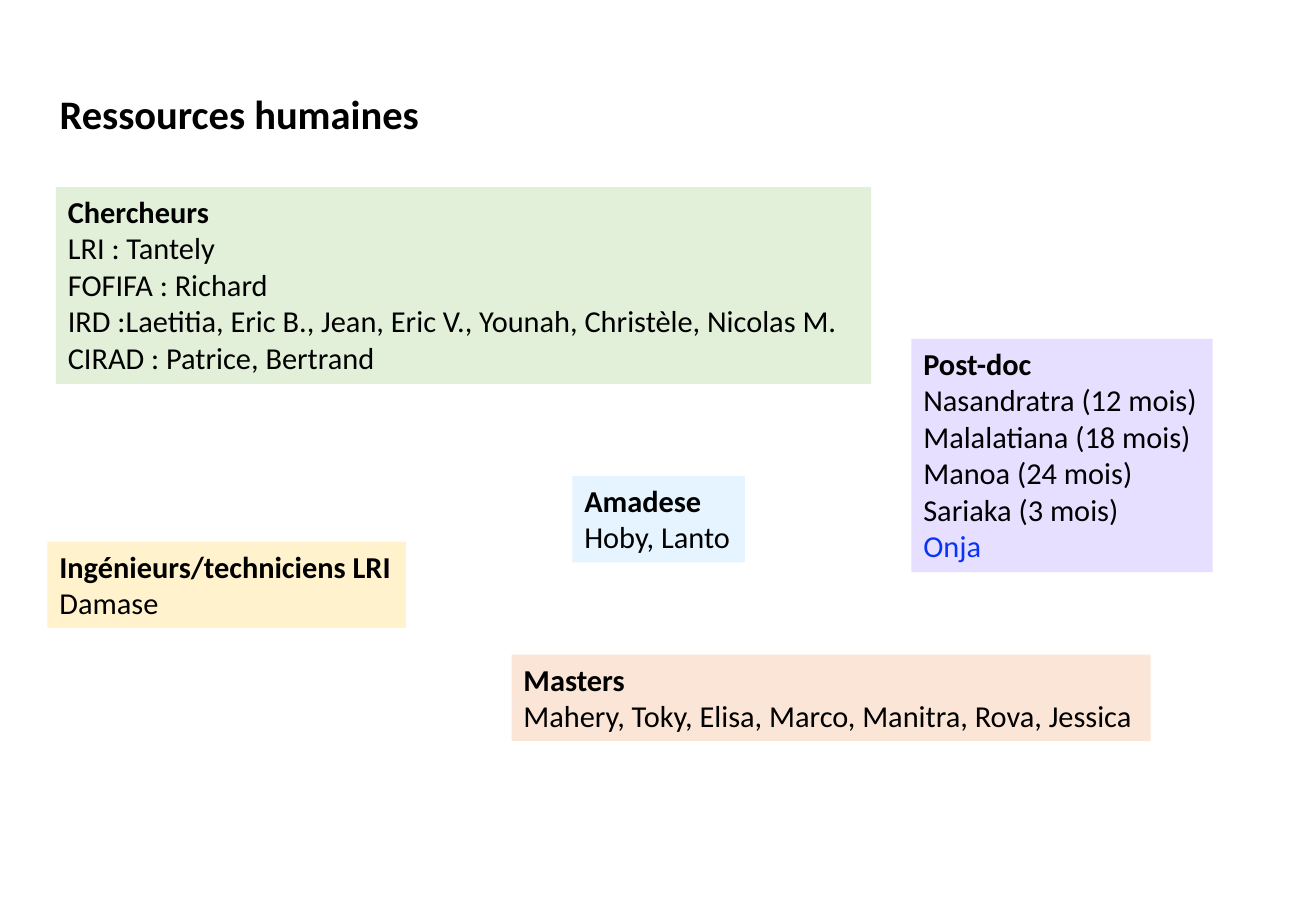
import pptx
import pptx.util
import pptx.dml.color
import pptx.enum.shapes
import pptx.enum.text

Inches = pptx.util.Inches


def rgb(value):
    return pptx.dml.color.RGBColor.from_string(value)


def add_text(p, text, size=18, bold=False, color="000000", font="Calibri"):
    p.alignment = pptx.enum.text.PP_ALIGN.LEFT
    r = p.add_run()
    r.text = text
    r.font.name = font
    r.font.size = pptx.util.Pt(size)
    r.font.bold = bold
    r.font.color.rgb = rgb(color)


prs = pptx.Presentation()
prs.slide_width = Inches(10.83)
prs.slide_height = Inches(7.5)
s = prs.slides.add_slide(prs.slide_layouts[5])

title = s.shapes.title
title.left, title.top = Inches(0.39), Inches(0.68)
title.width, title.height = Inches(3.19), Inches(0.5)
tf = title.text_frame
tf.word_wrap = False
tf.auto_size = pptx.enum.text.MSO_AUTO_SIZE.SHAPE_TO_FIT_TEXT
tf.vertical_anchor = pptx.enum.text.MSO_ANCHOR.TOP
add_text(tf.paragraphs[0], "Ressources humaines", size=24, bold=True)

groups = [
    ("Post-doc", (7.5, 2.79, 2.48, 1.92), "E6DFFF", False,
     ["Nasandratra (12 mois)", "Malalatiana (18 mois)", "Manoa (24 mois)",
      "Sariaka (3 mois)", "Onja"]),
    ("Ingénieurs/techniciens LRI", (0.39, 4.46, 2.95, 0.71), "FFF2CC", False,
     ["Damase"]),
    ("Amadese", (4.71, 3.92, 1.42, 0.71), "E5F4FF", False,
     ["Hoby, Lanto"]),
    ("Chercheurs", (0.46, 1.54, 6.71, 1.62), "E2F0D9", True,
     ["LRI : Tantely", "FOFIFA : Richard",
      "IRD :Laetitia, Eric B., Jean, Eric V., Younah, Christèle, Nicolas M.",
      "CIRAD : Patrice, Bertrand"]),
    ("Masters", (4.21, 5.39, 5.26, 0.71), "FBE5D6", False,
     ["Mahery, Toky, Elisa, Marco, Manitra, Rova, Jessica"]),
]
name_colors = {"Onja": "0833F8"}

for heading, box, fill, wrap, members in groups:
    sp = s.shapes.add_shape(pptx.enum.shapes.MSO_SHAPE.RECTANGLE,
                            *[Inches(v) for v in box])
    sp.shadow.inherit = False
    sp.fill.solid()
    sp.fill.fore_color.rgb = rgb(fill)
    sp.line.fill.background()
    tf = sp.text_frame
    tf.word_wrap = wrap
    tf.auto_size = pptx.enum.text.MSO_AUTO_SIZE.SHAPE_TO_FIT_TEXT
    tf.vertical_anchor = pptx.enum.text.MSO_ANCHOR.TOP
    add_text(tf.paragraphs[0], heading, bold=True)
    for member in members:
        add_text(tf.add_paragraph(), member,
                 color=name_colors.get(member, "000000"))

prs.save("out.pptx")
